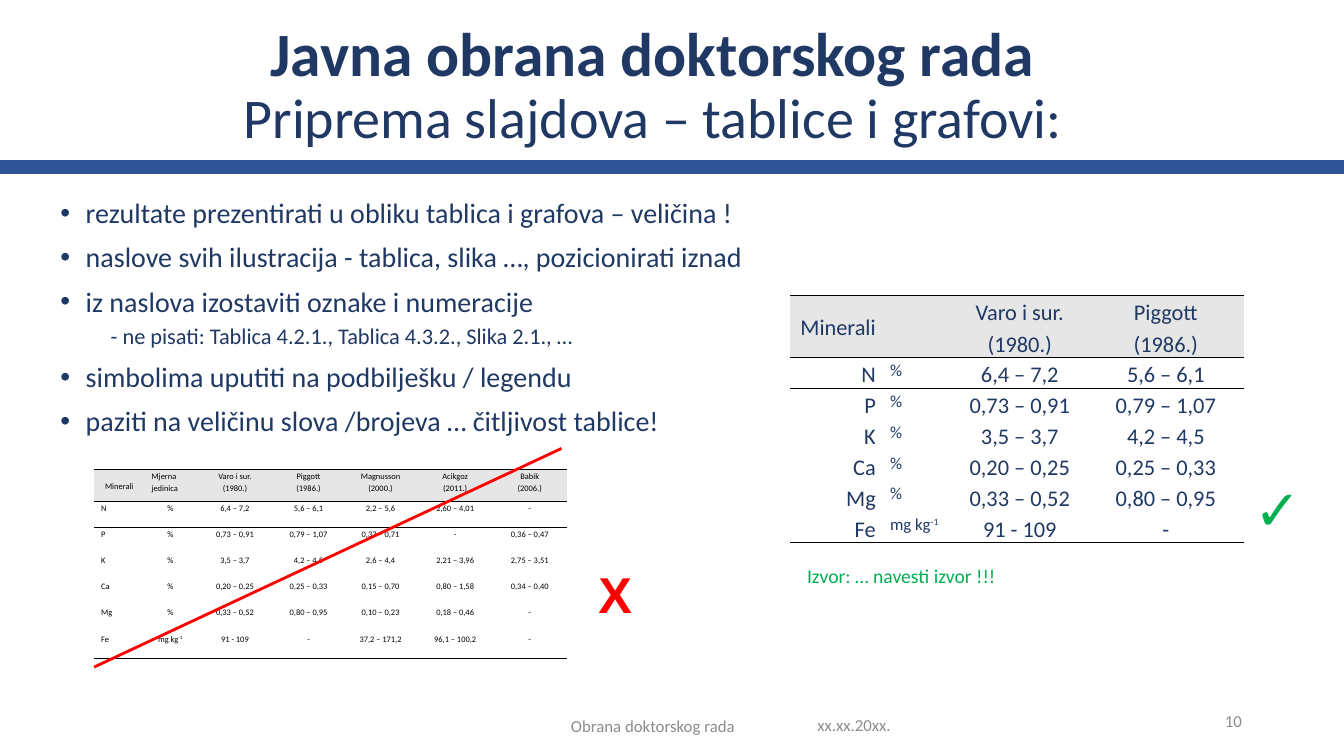
from pptx import Presentation
from pptx.dml.color import RGBColor
from pptx.enum.shapes import MSO_CONNECTOR
from pptx.enum.text import MSO_ANCHOR, PP_ALIGN
from pptx.oxml.ns import qn
from pptx.util import Cm, Pt
from lxml.etree import SubElement

NAVY, GREY, RED, GREEN, BLACK = "203864", "8C8C8C", "FF0000", "00B050", "000000"
BAND, HEAD_FILL = "2F5597", "E6E6E6"
PLAIN_TABLE = "{2D5ABB26-0587-4C30-8999-92F81FD0307C}"
ALIGN = {"l": PP_ALIGN.LEFT, "c": PP_ALIGN.CENTER, "r": PP_ALIGN.RIGHT}


def rgb(color):
    return RGBColor.from_string(color)


class SlideBuilder:
    font = "Calibri"

    def __init__(self, s):
        self.s = s

    def style(self, p, size, color, bold=False, align="l", spacing=None, font=None):
        p.alignment = ALIGN[align]
        if spacing:
            p.line_spacing = spacing
        for r in p.runs:
            r.font.name = font or self.font
            r.font.size = Pt(size)
            r.font.bold = bold
            r.font.color.rgb = rgb(color)

    def title(self, box, lines):
        sp = self.s.shapes.title
        sp.left, sp.top, sp.width, sp.height = map(Cm, box)
        tf = sp.text_frame
        tf.text = "\n".join(text for text, size, bold in lines)
        tf.vertical_anchor = MSO_ANCHOR.MIDDLE
        for p, (text, size, bold) in zip(tf.paragraphs, lines):
            self.style(p, size, NAVY, bold, "c", 0.9)

    def text(self, box, text, size, color, anchor=MSO_ANCHOR.TOP, wrap=True, **style):
        tf = self.s.shapes.add_textbox(*map(Cm, box)).text_frame
        tf.word_wrap = wrap
        tf.vertical_anchor = anchor
        tf.text = text
        for p in tf.paragraphs:
            self.style(p, size, color, **style)
        return tf

    def bullets(self, box, items):
        tf = self.text(box, "\n".join(items), 20, NAVY, spacing=0.9)
        for i, p in enumerate(tf.paragraphs):
            pPr = p._p.get_or_add_pPr()
            if p.text.startswith("-"):
                p.level = 1
                pPr.set("marL", str(Cm(1.27)))
                pPr.set("indent", "0")
                p.space_before = Pt(5)
                p.runs[0].font.size = Pt(16)
            else:
                pPr.set("marL", str(Cm(0.64)))
                pPr.set("indent", str(-Cm(0.64)))
                p.space_before = Pt(10 if i else 0)
                SubElement(pPr, qn("a:buFont")).set("typeface", "Arial")
                SubElement(pPr, qn("a:buChar")).set("char", "•")

    def line(self, start, end, color, width):
        c = self.s.shapes.add_connector(MSO_CONNECTOR.STRAIGHT, *map(Cm, start + end))
        c.line.color.rgb = rgb(color)
        c.line.width = Pt(width)
        SubElement(c._element.spPr, qn("a:effectLst"))

    def border(self, cell, *sides):
        tcPr = cell._tc.get_or_add_tcPr()
        for i, side in enumerate(sides):
            ln = tcPr.makeelement(qn("a:" + side), {"w": str(Pt(1))})
            fill = SubElement(ln, qn("a:solidFill"))
            SubElement(fill, qn("a:srgbClr")).set("val", BLACK)
            tcPr.insert(i, ln)

    def cell(self, cell, text, size, color, align):
        cell.margin_left = cell.margin_right = Cm(0.18)
        cell.margin_top = cell.margin_bottom = 0
        base, mark, power = text.partition("^")
        tf = cell.text_frame
        tf.text = base
        if mark:
            r = tf.paragraphs[0].add_run()
            r.text = power
            r.font._element.set("baseline", "30000")
        for p in tf.paragraphs:
            self.style(p, size, color, align=align, spacing=1.15)

    def table(self, pos, widths, heights, rows, sizes, color, head_align, body_align):
        x, y = map(Cm, pos)
        shape = self.s.shapes.add_table(len(rows), len(widths), x, y,
                                        Cm(sum(widths)), Cm(sum(heights)))
        table = shape.table
        table.first_row = table.horz_banding = False
        table._tbl.tblPr.find(qn("a:tableStyleId")).text = PLAIN_TABLE
        for column, width in zip(table.columns, widths):
            column.width = Cm(width)
        for i, (row, height, texts) in enumerate(zip(table.rows, heights, rows)):
            row.height = Cm(height)
            for j, (cell, text) in enumerate(zip(row.cells, texts)):
                align = body_align[j] if i else head_align[j]
                self.cell(cell, text, sizes[j], color, align)
                if i == 0:
                    cell.fill.solid()
                    cell.fill.fore_color.rgb = rgb(HEAD_FILL)
                    self.border(cell, "lnT", "lnB")
                    if j == 0:
                        cell.vertical_anchor = MSO_ANCHOR.MIDDLE
                else:
                    cell.fill.background()
                    if i == 1:
                        self.border(cell, "lnT")
                    elif i == len(rows) - 1:
                        self.border(cell, "lnB")


BULLETS = [
    "rezultate prezentirati u obliku tablica i grafova – veličina !",
    "naslove svih ilustracija - tablica, slika …, pozicionirati iznad",
    "iz naslova izostaviti oznake i numeracije",
    "- ne pisati: Tablica 4.2.1., Tablica 4.3.2., Slika 2.1., …",
    "simbolima uputiti na podbilješku / legendu",
    "paziti na veličinu slova /brojeva … čitljivost tablice!",
]
MINERALS = [
    ["Minerali", "Mjerna\njedinica", "Varo i sur.\n(1980.)", "Piggott\n(1986.)",
     "Magnusson\n(2000.)", "Acikgoz\n(2011.)", "Babik\n(2006.)"],
    ["N", "%", "6,4 – 7,2", "5,6 – 6,1", "2,2 – 5,6", "2,60 – 4,01", "-"],
    ["P", "%", "0,73 – 0,91", "0,79 – 1,07", "0,37 – 0,71", "-", "0,36 – 0,47"],
    ["K", "%", "3,5 – 3,7", "4,2 – 4,5", "2,6 – 4,4", "2,21 – 3,96", "2,75 – 3,51"],
    ["Ca", "%", "0,20 – 0,25", "0,25 – 0,33", "0,15 – 0,70", "0,80 – 1,58", "0,34 – 0,40"],
    ["Mg", "%", "0,33 – 0,52", "0,80 – 0,95", "0,10 – 0,23", "0,18 – 0,46", "-"],
    ["Fe", "mg kg^-1", "91 - 109", "-", "37,2 – 171,2", "96,1 – 100,2", "-"],
]


def main():
    prs = Presentation()
    prs.slide_width, prs.slide_height = Cm(33.87), Cm(19.05)
    b = SlideBuilder(prs.slides.add_slide(prs.slide_layouts[5]))

    b.title((0.89, 0.46, 31.12, 3.45), [
        ("Javna obrana doktorskog rada", 44, True),
        ("Priprema slajdova – tablice i grafovi:", 40, False),
    ])
    b.line((0, 4.2), (33.87, 4.2), BAND, 10)
    b.bullets((1.27, 4.9, 18.47, 6.4), BULLETS)

    b.table((2.37, 11.84), [1.27, 1.3, 1.96, 1.75] + [1.88] * 3, [0.8] + [0.66] * 6,
            MINERALS, [6] * 7, BLACK, "clccccc", "lcccccc")
    b.line((2.37, 16.81), (14.15, 11.3), RED, 2)
    b.text((14.83, 14.07, 1.4, 1.8), "X", 36, RED, bold=True, font="Arial")

    short_head = ["Minerali", ""] + MINERALS[0][2:4]
    b.table((19.91, 7.44), [2.34, 1.75, 3.4, 3.96], [1.56] + [0.78] * 6,
            [short_head] + [row[:4] for row in MINERALS[1:]],
            [16, 12, 16, 16], NAVY, "rlcc", "rlcc")
    b.text((20.09, 14.07, 6.86, 0.86), "Izvor: … navesti izvor !!!", 14, GREEN,
           MSO_ANCHOR.MIDDLE)
    b.text((31.37, 11.84, 1.63, 1.96), "✓", 40, GREEN, wrap=False, bold=True)

    for box, text, align in [
        ((20.35, 17.75, 2.82, 1.02), "xx.xx.20xx.", "l"),
        ((14.12, 17.78, 4.67, 1.02), "Obrana doktorskog rada", "c"),
        ((23.93, 17.65, 7.62, 1.02), "10", "r"),
    ]:
        b.text(box, text, 12, GREY, MSO_ANCHOR.MIDDLE, align=align)

    prs.save("out.pptx")


if __name__ == "__main__":
    main()
